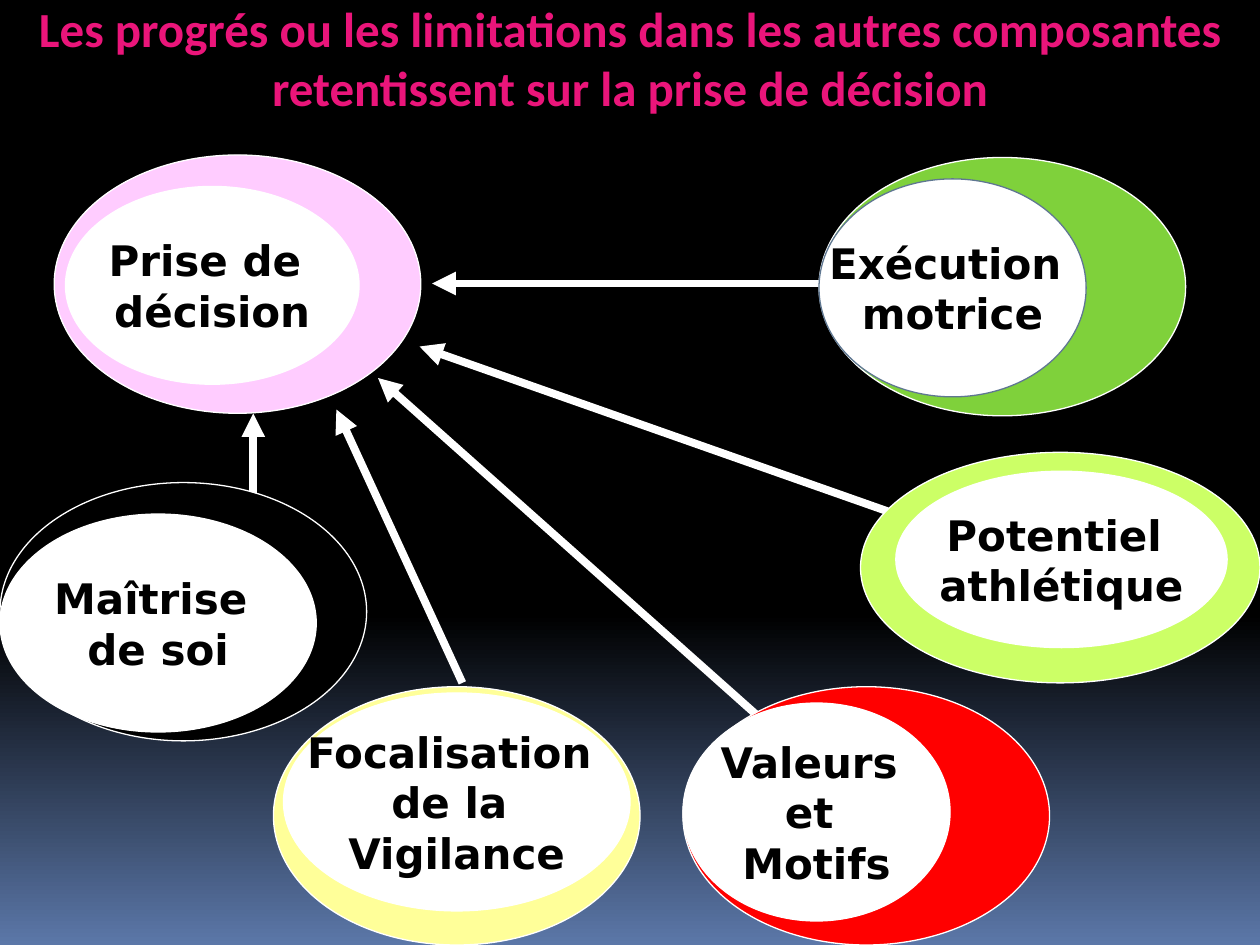
"""Build a slide showing which components act on decision making."""
from lxml import etree
from pptx import Presentation
from pptx.dml.color import RGBColor
from pptx.enum.shapes import MSO_CONNECTOR, MSO_SHAPE
from pptx.enum.text import MSO_ANCHOR, MSO_AUTO_SIZE, PP_ALIGN
from pptx.oxml.ns import qn
from pptx.util import Inches, Pt

OVAL = MSO_SHAPE.OVAL
STRAIGHT = MSO_CONNECTOR.STRAIGHT
CENTER = PP_ALIGN.CENTER
MIDDLE = MSO_ANCHOR.MIDDLE
NO_AUTOFIT = MSO_AUTO_SIZE.NONE


def rgb(value):
    return RGBColor.from_string(value)


def write(tf, text, size=24, font="DejaVu Sans", color="000000", wrap=False):
    tf.auto_size = NO_AUTOFIT
    tf.word_wrap = wrap
    tf.vertical_anchor = MIDDLE
    for i, line in enumerate(text.split("\n")):
        p = tf.add_paragraph() if i else tf.paragraphs[0]
        p.alignment = CENTER
        r = p.add_run()
        r.text = line
        r.font.size = Pt(size)
        r.font.name = font
        r.font.bold = True
        r.font.color.rgb = rgb(color)


prs = Presentation()
prs.slide_width, prs.slide_height = Inches(10), Inches(7.5)
s = prs.slides.add_slide(prs.slide_layouts[5])

fill = s.background.fill
fill.gradient()
fill.gradient_angle = 270
for stop, position, color in zip(fill.gradient_stops, (0.65, 1), ("000000", "5B77A8")):
    stop.position = position
    stop.color.rgb = rgb(color)

title = s.shapes.title
title.left, title.top = Inches(0), Inches(0)
title.width, title.height = Inches(10), Inches(0.91)
write(title.text_frame,
      "Les progrés ou les limitations dans les autres composantes "
      "retentissent sur la prise de décision",
      size=28, font="Calibri", color="EA157A", wrap=True)

arrows = [
    (3.43, 2.25, 6.57, 2.25),
    (3.33, 2.75, 7.05, 4.06),
    (2.01, 3.28, 2.01, 4.85),
    (2.67, 3.25, 3.67, 5.42),
    (3, 3, 6, 5.67),
]
for ends in arrows:
    arrow = s.shapes.add_connector(STRAIGHT, *map(Inches, ends))
    arrow.line.color.rgb = rgb("FFFFFF")
    arrow.line.width = Pt(4.5)
    etree.SubElement(arrow.line._get_or_add_ln(), qn("a:headEnd"), type="triangle")
    etree.SubElement(arrow._element.spPr, qn("a:effectLst"))

components = [
    ("Valeurs \net \nMotifs", "FF0000", (5.42, 5.45, 2.91, 2.05),
     (5.42, 5.58, 2.12, 1.73), "FFFFFF"),
    ("Maîtrise \nde soi", "000000", (0, 3.83, 2.91, 2.05),
     (0, 4.08, 2.51, 1.73), "FFFFFF"),
    ("Exécution \nmotrice", "7FD13B", (6.5, 1.25, 2.91, 2.05),
     (6.5, 1.42, 2.12, 1.73), "5F7791"),
    ("Focalisation \nde la \nVigilance", "FFFF99", (2.17, 5.45, 2.91, 2.05),
     (2.25, 5.5, 2.75, 1.73), "FFFFFF"),
    ("Potentiel \nathlétique", "CCFF66", (6.83, 3.59, 3.17, 1.83),
     (7.11, 3.74, 2.63, 1.4), "FFFFFF"),
    ("Prise de \ndécision", "FFCCFF", (0.43, 1.23, 2.91, 2.05),
     (0.52, 1.48, 2.33, 1.57), "FFFFFF"),
]
for text, color, outer, inner, inner_line in components:
    for box, face, edge in ((outer, color, "FFFFFF"), (inner, "FFFFFF", inner_line)):
        sp = s.shapes.add_shape(OVAL, *map(Inches, box))
        sp.shadow.inherit = False
        sp.fill.solid()
        sp.fill.fore_color.rgb = rgb(face)
        sp.line.color.rgb = rgb(edge)
        sp.line.width = Pt(0.75)
    write(sp.text_frame, text)

prs.save("out.pptx")
